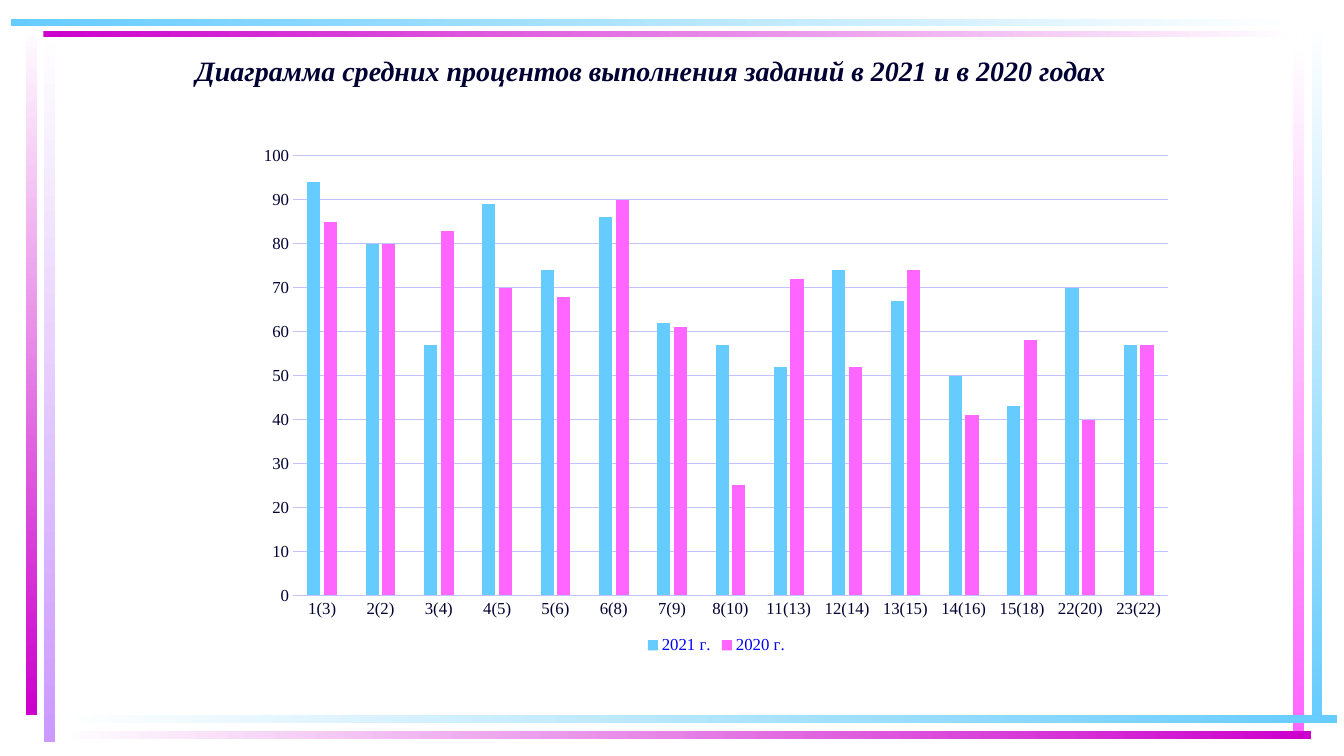
from dataclasses import dataclass

from lxml.etree import SubElement
from pptx import Presentation
from pptx.chart.axis import _BaseAxis
from pptx.chart.chart import Chart
from pptx.chart.data import CategoryChartData
from pptx.dml.color import RGBColor
from pptx.enum.chart import XL_CHART_TYPE, XL_LEGEND_POSITION, XL_TICK_MARK
from pptx.enum.shapes import MSO_SHAPE
from pptx.enum.text import MSO_ANCHOR, MSO_AUTO_SIZE, PP_ALIGN
from pptx.oxml.ns import qn
from pptx.slide import Slide
from pptx.text.text import Font
from pptx.util import Inches, Pt

SERIF = "Times New Roman"
WHITE, BLUE, MAGENTA, PINK, LILAC = "FFFFFF", "66CCFF", "CC00CC", "FF66FF", "CC99FF"
INK, GRID, LEGEND_BLUE = "000033", "C2C2FF", "0000F5"
ACROSS, DOWN = 0, 270


@dataclass
class Stripe:
    left: float
    top: float
    width: float
    height: float
    start: str
    end: str
    angle: int


@dataclass
class YearSeries:
    name: str
    values: tuple[int, ...]
    color: str


STRIPES = [
    Stripe(0.44, 0.28, 0.11, 7.08, WHITE, LILAC, DOWN),
    Stripe(0.26, 0.25, 0.11, 6.84, WHITE, MAGENTA, DOWN),
    Stripe(13.01, 0.24, 0.1, 6.93, WHITE, BLUE, DOWN),
    Stripe(12.82, 0.42, 0.11, 6.83, WHITE, PINK, DOWN),
    Stripe(0.59, 7.09, 12.67, 0.08, WHITE, BLUE, ACROSS),
    Stripe(0.6, 7.25, 12.4, 0.08, WHITE, MAGENTA, ACROSS),
    Stripe(0.43, 0.31, 12.43, 0.06, MAGENTA, WHITE, ACROSS),
    Stripe(0.11, 0.19, 12.75, 0.07, BLUE, WHITE, ACROSS),
]
TASKS = ["1(3)", "2(2)", "3(4)", "4(5)", "5(6)", "6(8)", "7(9)", "8(10)", "11(13)",
         "12(14)", "13(15)", "14(16)", "15(18)", "22(20)", "23(22)"]
YEARS = [
    YearSeries("2021 г.", (94, 80, 57, 89, 74, 86, 62, 57, 52, 74, 67, 50, 43, 70, 57), BLUE),
    YearSeries("2020 г.", (85, 80, 83, 70, 68, 90, 61, 25, 72, 52, 74, 41, 58, 40, 57), PINK),
]
PLOT_AREA = {"x": 0.05, "y": 0.04, "w": 0.93, "h": 0.84}


def color(value: str) -> RGBColor:
    return RGBColor.from_string(value)


def format_font(font: Font, size: int, value: str) -> None:
    font.name = SERIF
    font.size = Pt(size)
    font.color.rgb = color(value)


def add_stripe(slide: Slide, stripe: Stripe) -> None:
    shape = slide.shapes.add_shape(
        MSO_SHAPE.RECTANGLE, Inches(stripe.left), Inches(stripe.top),
        Inches(stripe.width), Inches(stripe.height))
    shape.shadow.inherit = False
    shape.line.fill.background()
    shape.fill.gradient()
    shape.fill.gradient_angle = stripe.angle
    for stop, value in zip(shape.fill.gradient_stops, (stripe.start, stripe.end)):
        stop.color.rgb = color(value)


def add_title(slide: Slide) -> None:
    title = slide.shapes.title
    title.left, title.top = Inches(0.79), Inches(0.44)
    title.width, title.height = Inches(11.33), Inches(0.47)
    text_frame = title.text_frame
    text_frame.text = "Диаграмма средних процентов выполнения заданий в 2021 и в 2020 годах"
    text_frame.word_wrap = True
    text_frame.auto_size = MSO_AUTO_SIZE.NONE
    text_frame.vertical_anchor = MSO_ANCHOR.BOTTOM
    paragraph = text_frame.paragraphs[0]
    paragraph.alignment = PP_ALIGN.CENTER
    paragraph.line_spacing = 0.8
    font = paragraph.runs[0].font
    format_font(font, 20, INK)
    font.bold = font.italic = True


def format_axis(axis: _BaseAxis) -> None:
    axis.major_tick_mark = axis.minor_tick_mark = XL_TICK_MARK.NONE
    format_font(axis.tick_labels.font, 12, INK)


def place_plot_area(chart: Chart) -> None:
    plot_area = chart.element.find(".//" + qn("c:plotArea"))
    for old_layout in plot_area.findall(qn("c:layout")):
        plot_area.remove(old_layout)
    layout = SubElement(plot_area, qn("c:layout"))
    plot_area.insert(0, layout)
    manual = SubElement(layout, qn("c:manualLayout"))
    settings = {"layoutTarget": "inner", "xMode": "edge", "yMode": "edge", **PLOT_AREA}
    for name, value in settings.items():
        SubElement(manual, qn(f"c:{name}")).set("val", str(value))


def add_results_chart(slide: Slide) -> None:
    data = CategoryChartData()
    data.categories = TASKS
    for year in YEARS:
        data.add_series(year.name, year.values)
    chart = slide.shapes.add_chart(
        XL_CHART_TYPE.COLUMN_CLUSTERED, Inches(2.44), Inches(1.34),
        Inches(9.33), Inches(5.19), data).chart
    format_font(chart.font, 12, INK)
    chart.has_title = False
    chart.has_legend = True
    chart.legend.position = XL_LEGEND_POSITION.BOTTOM
    chart.legend.include_in_layout = False
    format_font(chart.legend.font, 12, LEGEND_BLUE)

    plot = chart.plots[0]
    plot.gap_width, plot.overlap = 219, -27
    plot.vary_by_categories = False
    for series, year in zip(plot.series, YEARS):
        series.format.fill.solid()
        series.format.fill.fore_color.rgb = color(year.color)
        series.invert_if_negative = False

    category_axis, value_axis = chart.category_axis, chart.value_axis
    format_axis(category_axis)
    format_axis(value_axis)
    value_axis.minimum_scale, value_axis.maximum_scale = 0, 100
    value_axis.major_unit = 10
    value_axis.format.line.fill.background()
    for line in (category_axis.format.line, value_axis.major_gridlines.format.line):
        line.color.rgb = color(GRID)
        line.width = Pt(0.75)
    place_plot_area(chart)


def main() -> None:
    presentation = Presentation()
    presentation.slide_width, presentation.slide_height = Inches(13.33), Inches(7.5)
    slide = presentation.slides.add_slide(presentation.slide_layouts[5])
    for stripe in STRIPES:
        add_stripe(slide, stripe)
    add_title(slide)
    add_results_chart(slide)
    presentation.save("out.pptx")


if __name__ == "__main__":
    main()
